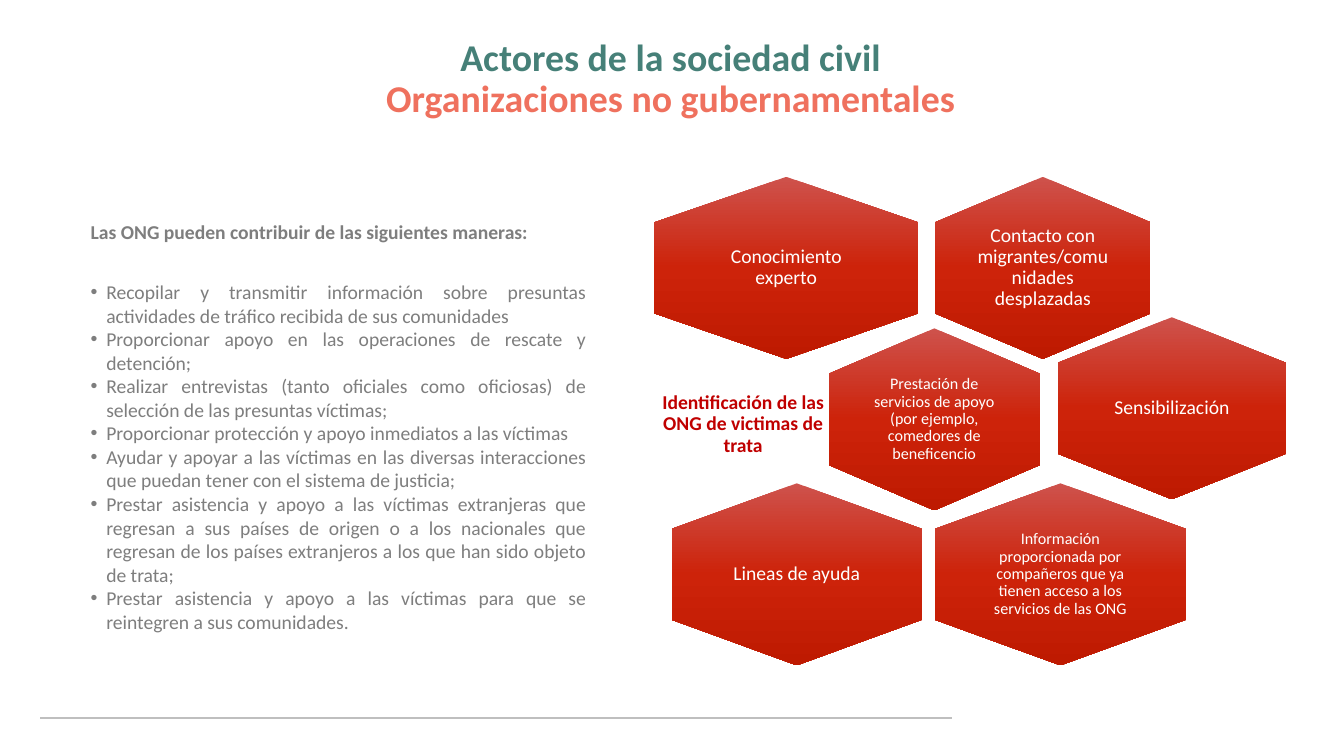
from copy import deepcopy

from lxml.etree import SubElement
from pptx import Presentation
from pptx.dml.color import RGBColor
from pptx.enum.shapes import MSO_CONNECTOR as CONNECTOR, MSO_SHAPE as SHAPE
from pptx.enum.text import MSO_ANCHOR as ANCHOR, PP_ALIGN as ALIGN
from pptx.oxml.ns import qn
from pptx.util import Inches, Pt

COLORS = {
    "title": "468078", "subtitle": "EF715E", "body": "7E7E7E", "rule": "BFBFBF",
    "hexagon_text": "FFFFFF", "label": "C00000",
    "light": "CE524C", "middle": "CD230A", "dark": "BE1A01",
}
HEXAGON_STOPS = [(0, "light"), (0.5, "middle"), (1, "dark")]
HEXAGON_HEIGHT = 24.07  # percent of the slide height

INTRO = "Las ONG pueden contribuir de las siguientes maneras:"
CONTRIBUTIONS = [
    "Recopilar y transmitir información sobre presuntas actividades de tráfico "
    "recibida de sus comunidades",
    "Proporcionar apoyo en las operaciones de rescate y detención;",
    "Realizar entrevistas (tanto oficiales como oficiosas) de selección de las "
    "presuntas víctimas;",
    "Proporcionar protección y apoyo inmediatos a las víctimas",
    "Ayudar y apoyar a las víctimas en las diversas interacciones que puedan "
    "tener con el sistema de justicia;",
    "Prestar asistencia y apoyo a las víctimas extranjeras que regresan a sus "
    "países de origen o a los nacionales que regresan de los países extranjeros "
    "a los que han sido objeto de trata;",
    "Prestar asistencia y apoyo a las víctimas para que se reintegren a sus "
    "comunidades.",
]
# Centre x, centre y, width (percent of the slide), text size, text
HEXAGONS = [
    (77.59, 35.43, 16.05, 28, "Contacto con migrantes/comunidades desplazadas"),
    (58.5, 35.43, 19.62, 28, "Conocimiento experto"),
    (69.52, 55.47, 15.75, 23,
     "Prestación de servicios de apoyo (por ejemplo, comedores de beneficencio"),
    (87.19, 54, 16.95, 28, "Sensibilización"),
    (78.9, 75.97, 18.64, 23,
     "Información proporcionada por compañeros que ya tienen acceso a los "
     "servicios de las ONG"),
    (59.28, 75.97, 18.57, 28, "Lineas de ayuda"),
]


class SlideBuilder:
    """Places elements by percent of the slide's width and height."""

    font_name = "Calibri"

    def __init__(self, presentation):
        self.width = presentation.slide_width
        self.height = presentation.slide_height
        self.slide = presentation.slides.add_slide(presentation.slide_layouts[6])

    def x(self, percent):
        return round(self.width * percent / 100)

    def y(self, percent):
        return round(self.height * percent / 100)

    def color(self, name):
        return RGBColor.from_string(COLORS[name])

    def style(self, font, size, color, bold=False):
        values = {"name": self.font_name, "size": Pt(size), "bold": bold}
        for name, value in values.items():
            setattr(font, name, value)
        font.color.rgb = self.color(color)

    def text_box(self, left, top, width, height, **frame_format):
        box = self.slide.shapes.add_textbox(
            self.x(left), self.y(top), self.x(width), self.y(height))
        frame = box.text_frame
        for name, value in {"word_wrap": True, **frame_format}.items():
            setattr(frame, name, value)
        return frame

    def rule(self, left, right, level):
        line = self.slide.shapes.add_connector(
            CONNECTOR.STRAIGHT, self.x(left), self.y(level),
            self.x(right), self.y(level))
        line.line.color.rgb = self.color("rule")
        line.line.width = Pt(2.25)
        SubElement(line._element.spPr, qn("a:effectLst"))

    def title(self, left, top, width, height, lines):
        frame = self.text_box(left, top, width, height, margin_top=Inches(0.22))
        paragraph = frame.paragraphs[0]
        paragraph.alignment = ALIGN.CENTER
        paragraph.line_spacing = 0.9
        for index, (text, color) in enumerate(lines):
            if index:
                paragraph.add_line_break()
            run = paragraph.add_run()
            run.text = text
            self.style(run.font, 54, color, bold=True)

    def bullet_list(self, left, top, width, height, intro, items):
        frame = self.text_box(left, top, width, height)
        heading = frame.paragraphs[0]
        heading.text = intro
        heading.alignment = ALIGN.JUSTIFY
        heading.space_after = Pt(52)
        self.style(heading.font, 28, "body", bold=True)
        for item in items:
            paragraph = frame.add_paragraph()
            paragraph.text = item
            paragraph.alignment = ALIGN.JUSTIFY
            properties = paragraph._p.get_or_add_pPr()
            indent = Inches(0.31)
            properties.set("marL", str(indent))
            properties.set("indent", str(-indent))
            SubElement(properties, qn("a:buFont"), typeface="Arial")
            SubElement(properties, qn("a:buChar"), char="•")
            self.style(paragraph.font, 28, "body")

    def centred_text(self, center_x, center_y, width, height, text, size, color,
                     bold=False):
        margins = {f"margin_{side}": Inches(0.1)
                   for side in ("left", "top", "right", "bottom")}
        frame = self.text_box(center_x - width / 2, center_y - height / 2,
                              width, height, vertical_anchor=ANCHOR.MIDDLE, **margins)
        paragraph = frame.paragraphs[0]
        paragraph.text = text
        paragraph.alignment = ALIGN.CENTER
        paragraph.line_spacing = 0.9
        self.style(paragraph.font, size, color, bold)

    def hexagon(self, center_x, center_y, width, size, text):
        # Turned a quarter, so the frame's width is the visible height
        frame_width, frame_height = self.y(HEXAGON_HEIGHT), self.x(width)
        shape = self.slide.shapes.add_shape(
            SHAPE.HEXAGON, self.x(center_x) - frame_width // 2,
            self.y(center_y) - frame_height // 2, frame_width, frame_height)
        shape.rotation = 90
        shape.adjustments[0] = 0.25
        shape.shadow.inherit = False
        shape.line.fill.background()
        self.gradient(shape)
        self.centred_text(center_x, center_y, width * 2 / 3, HEXAGON_HEIGHT * 2 / 3,
                          text, size, "hexagon_text")

    def gradient(self, shape):
        shape.fill.gradient()
        shape.fill.gradient_angle = 270
        gradient = shape._element.spPr.find(qn("a:gradFill"))
        gradient.set("rotWithShape", "0")
        stop_list = gradient.find(qn("a:gsLst"))
        stop_list.insert(1, deepcopy(stop_list[0]))
        for stop, (position, color) in zip(shape.fill.gradient_stops, HEXAGON_STOPS):
            stop.position = position
            stop.color.rgb = self.color(color)


def main():
    presentation = Presentation()
    presentation.slide_width = Inches(26.66)
    presentation.slide_height = Inches(15)
    builder = SlideBuilder(presentation)

    # Footer rule and title
    builder.rule(3, 70.82, 95)
    builder.title(3, 3.67, 93.81, 19.33, [
        ("Actores de la sociedad civil", "title"),
        ("Organizaciones no gubernamentales", "subtitle"),
    ])

    # Contributions on the left
    builder.bullet_list(6.38, 28.8, 37.58, 59.27, INTRO, CONTRIBUTIONS)

    # Honeycomb on the right with its label
    for hexagon in HEXAGONS:
        builder.hexagon(*hexagon)
    builder.centred_text(55.29, 56.17, 14.63, 14.47,
                         "Identificación de las ONG de victimas de trata",
                         28, "label", bold=True)

    presentation.save("out.pptx")


if __name__ == "__main__":
    main()
